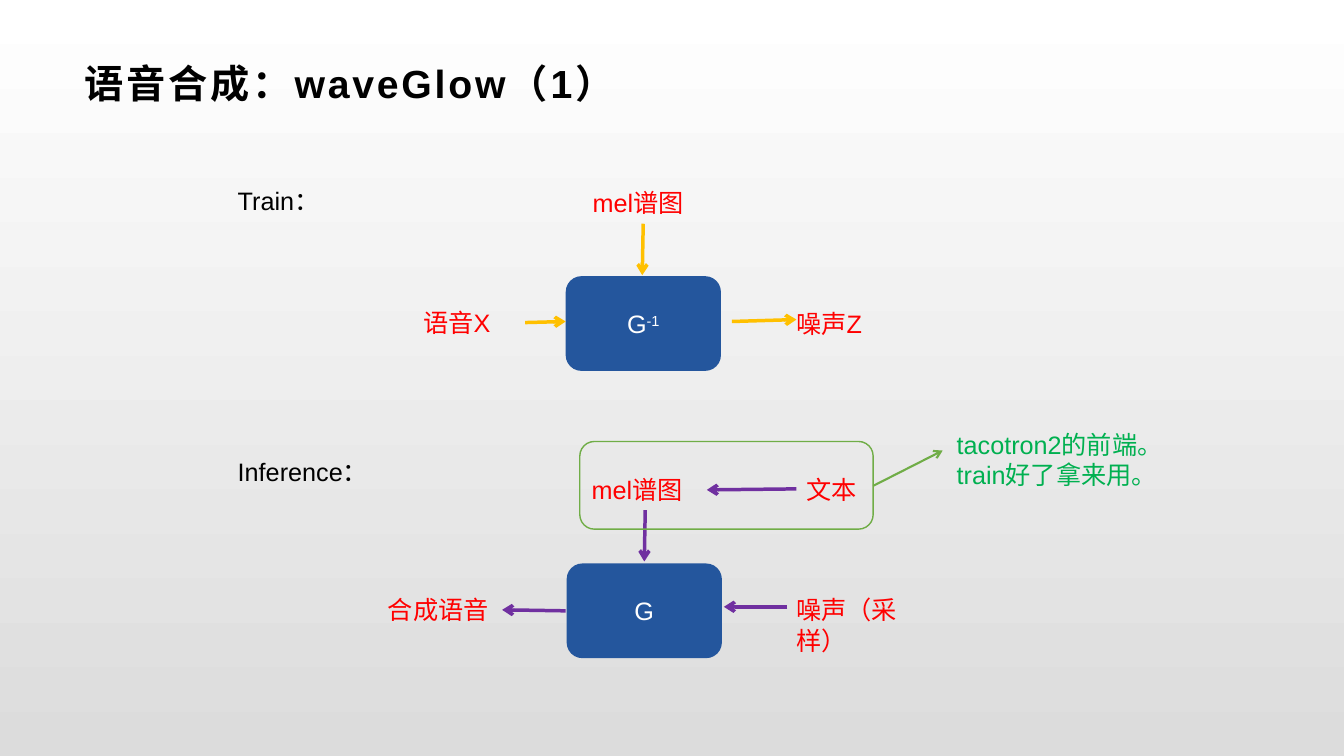
from dataclasses import dataclass

from lxml import etree
from pptx import Presentation
from pptx.dml.color import RGBColor
from pptx.enum.shapes import MSO_CONNECTOR, MSO_SHAPE
from pptx.enum.text import MSO_ANCHOR, PP_ALIGN
from pptx.oxml.ns import qn
from pptx.util import Inches, Pt

ROUND = MSO_SHAPE.ROUNDED_RECTANGLE
LINE = MSO_CONNECTOR.STRAIGHT
MIDDLE = MSO_ANCHOR.MIDDLE
LEFT, CENTER = PP_ALIGN.LEFT, PP_ALIGN.CENTER
WIDE, HIGH = Inches(13.33), Inches(7.5)
ROW = 5.33


@dataclass(frozen=True)
class Theme:
    """Colours, font and type sizes."""
    font: str = "Arial"
    body: int = 18
    head: int = 28
    ink: str = "000000"
    white: str = "FFFFFF"
    shade: str = "DCDCDC"
    label: str = "FF0000"
    note: str = "00B050"
    block: str = "24569D"
    frame: str = "70AD47"
    train: str = "FFC000"
    infer: str = "7030A0"


THEME = Theme()


def rgb(code):
    """Turn a hex code into a colour."""
    return RGBColor.from_string(code)


def spot(x, y):
    """Turn percent shares of the slide into a point."""
    return round(WIDE * x / 100), round(HIGH * y / 100)


def write(frame, text, size=THEME.body, color=THEME.ink, bold=False,
          align=LEFT, gap=0, sup=""):
    """Fill a text frame with one formatted paragraph."""
    frame.word_wrap = True
    para = frame.paragraphs[0]
    para.alignment = align
    for part, base in ((text, 0), (sup, 30000)):
        if not part:
            continue
        run = para.add_run()
        run.text = part
        font = run.font
        font.name, font.size, font.bold = THEME.font, Pt(size), bold
        font.color.rgb = rgb(color)
        props = run._r.get_or_add_rPr()
        if gap:
            props.set("spc", str(gap * 100))
        if base:
            props.set("baseline", str(base))


def label(slide, text, x, y, w, h=ROW, color=THEME.label):
    """Add a text box."""
    box = slide.shapes.add_textbox(*spot(x, y), *spot(w, h))
    write(box.text_frame, text, color=color)


def panel(slide, x, y, w, h, fill=None, line=None):
    """Add a rounded box, filled or outlined."""
    shape = slide.shapes.add_shape(ROUND, *spot(x, y), *spot(w, h))
    shape.shadow.inherit = False
    if fill:
        shape.fill.solid()
        shape.fill.fore_color.rgb = rgb(fill)
    else:
        shape.fill.background()
    if line:
        shape.line.color.rgb = rgb(line)
        shape.line.width = Pt(1)
    else:
        shape.line.fill.background()
    return shape


def block(slide, x, y, text, sup=""):
    """Add a model block with its name."""
    frame = panel(slide, x, y, 11.55, 12.53, fill=THEME.block).text_frame
    frame.vertical_anchor = MIDDLE
    write(frame, text, color=THEME.white, align=CENTER, sup=sup)


def arrow(slide, x1, y1, x2, y2, color, width=2.5):
    """Add a line with an open head at its end."""
    line = slide.shapes.add_connector(LINE, *spot(x1, y1), *spot(x2, y2))
    line.line.color.rgb = rgb(color)
    line.line.width = Pt(width)
    etree.SubElement(line.line._get_or_add_ln(), qn("a:tailEnd"), type="arrow")
    etree.SubElement(line._element.spPr, qn("a:effectLst"))


def title(slide, text):
    """Place and format the title."""
    head = slide.shapes.title
    head.left, head.top = spot(5.48, 6.27)
    head.width, head.height = spot(89.05, 9.47)
    frame = head.text_frame
    frame.vertical_anchor = MIDDLE
    frame.margin_left, frame.margin_right = Inches(0.11), Inches(0.08)
    frame.margin_top = frame.margin_bottom = Inches(0.04)
    write(frame, text, size=THEME.head, bold=True, gap=2)


def paint(slide):
    """Shade the background from top to bottom."""
    fill = slide.background.fill
    fill.gradient()
    fill.gradient_angle = 270
    for stop, place, code in zip(fill.gradient_stops, (0, 1),
                                 (THEME.white, THEME.shade)):
        stop.position = place
        stop.color.rgb = rgb(code)


def train(slide):
    """Draw the training flow."""
    label(slide, "Train：", 16.95, 23.87, 15, color=THEME.ink)
    label(slide, "mel谱图", 43.36, 24.13, 10.5)
    label(slide, "语音X", 30.76, 40, 9.38)
    label(slide, "噪声Z", 58.51, 40.13, 9.38)
    block(slide, 42.09, 36.53, "G", sup="-1")
    for ends in ((47.86, 29.6, 47.79, 36.4), (39.08, 42.67, 42.09, 42.53),
                 (54.46, 42.53, 59.26, 42.27)):
        arrow(slide, *ends, THEME.train)


def infer(slide):
    """Draw the inference flow and its note."""
    label(slide, "Inference：", 16.95, 59.73, 15, color=THEME.ink)
    label(slide, "mel谱图", 43.29, 62.13, 9.3)
    label(slide, "文本", 59.26, 62.13, 5.4)
    label(slide, "合成语音", 28.13, 78, 9.53)
    label(slide, "噪声（采样）", 58.51, 78, 12.38, 9.47)
    block(slide, 42.16, 74.53, "G")
    for ends in ((48.01, 67.47, 47.94, 74.27), (59.26, 64.67, 52.59, 64.8),
                 (58.59, 80.27, 53.86, 80.27), (42.09, 80.8, 37.36, 80.67)):
        arrow(slide, *ends, THEME.infer)
    panel(slide, 43.14, 58.4, 21.83, 11.6, line=THEME.frame)
    arrow(slide, 64.97, 64.27, 70.14, 59.6, THEME.frame, width=1.5)
    label(slide, "tacotron2的前端。train好了拿来用。", 70.44, 56.13,
          16.2, 9.47, color=THEME.note)


def main():
    """Build and save the slide."""
    deck = Presentation()
    deck.slide_width, deck.slide_height = WIDE, HIGH
    slide = deck.slides.add_slide(deck.slide_layouts[5])
    paint(slide)
    title(slide, "语音合成：waveGlow（1）")
    train(slide)
    infer(slide)
    deck.save("out.pptx")


if __name__ == "__main__":
    main()
